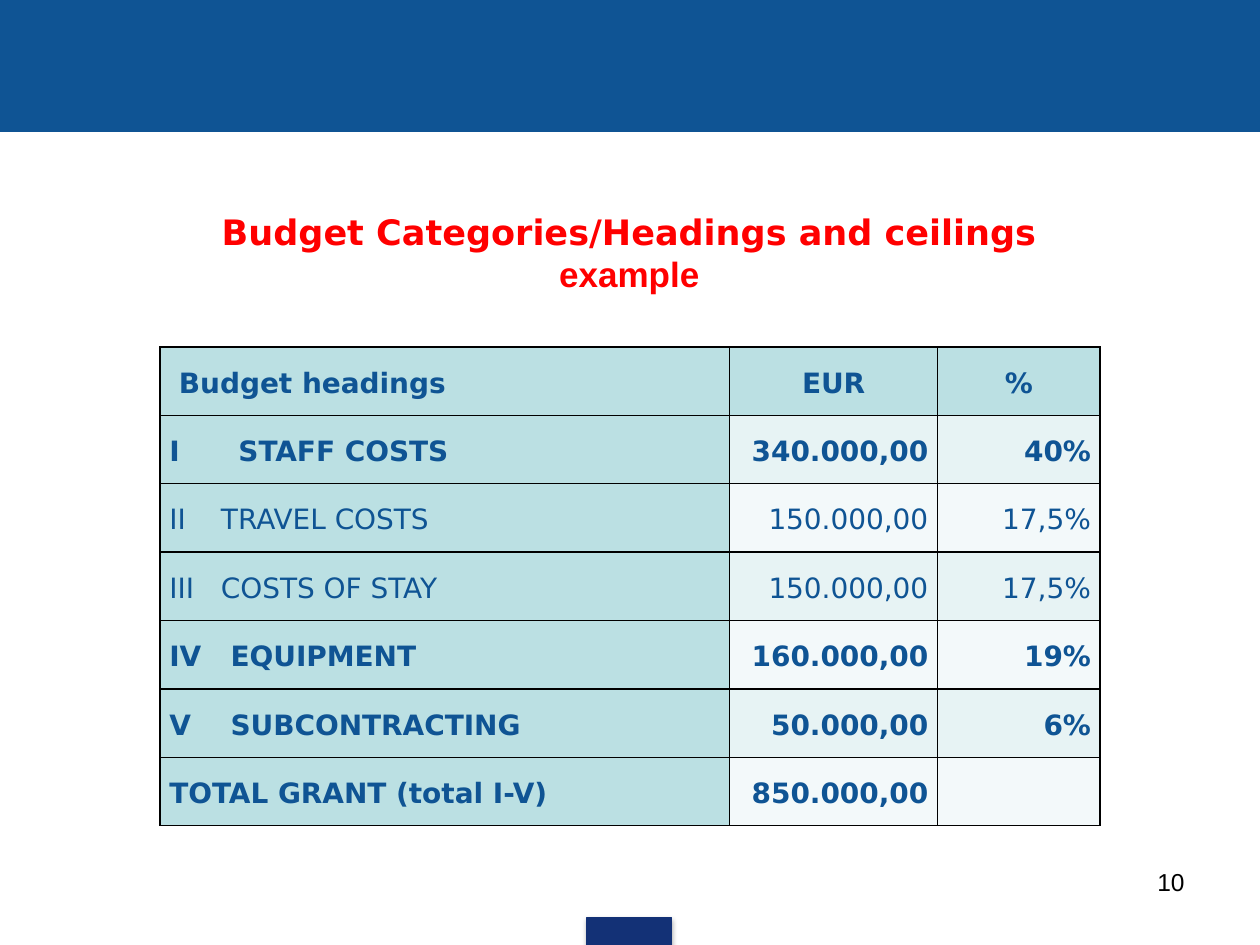
from dataclasses import dataclass

from lxml import etree
from pptx import Presentation
from pptx.dml.color import RGBColor
from pptx.enum.shapes import MSO_SHAPE
from pptx.enum.text import MSO_ANCHOR, MSO_AUTO_SIZE, PP_ALIGN
from pptx.oxml import parse_xml
from pptx.oxml.ns import qn
from pptx.util import Pt

RECT = MSO_SHAPE.RECTANGLE
MIDDLE = MSO_ANCHOR.MIDDLE
NO_FIT = MSO_AUTO_SIZE.NONE
LEFT, CENTER, RIGHT = PP_ALIGN.LEFT, PP_ALIGN.CENTER, PP_ALIGN.RIGHT
NS = "http://schemas.openxmlformats.org/drawingml/2006/main"


@dataclass(frozen=True)
class Theme:
    """Colours, fonts and type sizes of the slide."""
    blue: str = "0F5494"
    navy: str = "133176"
    red: str = "FF0000"
    black: str = "000000"
    heading_fill: str = "BBE0E3"
    bands: tuple = ("E7F3F4", "F3F9FA")
    sans: str = "DejaVu Sans"
    plain: str = "Arial"
    title_size: int = 20
    table_size: int = 16
    number_size: int = 14


THEME = Theme()
HEADER = ("Budget headings", "EUR", "%")
COLUMN_WIDTHS = (325.5, 118.8, 92.9)
ROW_HEIGHT = 39.1
HEADER_INDENT = 5.5
BUDGET = [
    ("I\tSTAFF COSTS", "340.000,00", "40%", True, 39.5),
    ("II\tTRAVEL COSTS", "150.000,00", "17,5%", False, 29.5),
    ("III\tCOSTS OF STAY", "150.000,00", "17,5%", False, 29.5),
    ("IV\tEQUIPMENT", "160.000,00", "19%", True, 35),
    ("V\tSUBCONTRACTING", "50.000,00", "6%", True, 35),
    ("TOTAL GRANT (total I-V)", "850.000,00", "", True, None),
]


def add_run(p, text, font, size, color, bold=False):
    """Add one formatted run to a paragraph."""
    r = p.add_run()
    r.text = text
    r.font.name, r.font.size, r.font.bold = font, Pt(size), bold
    r.font.color.rgb = RGBColor.from_string(color)


def add_bar(s, left, top, width, height, color):
    """Add a plain filled rectangle."""
    sp = s.shapes.add_shape(RECT, Pt(left), Pt(top), Pt(width), Pt(height))
    sp.shadow.inherit = False
    sp.fill.solid()
    sp.fill.fore_color.rgb = sp.line.color.rgb = RGBColor.from_string(color)
    sp.line.width = Pt(0.75)
    return sp


def add_shadow(sp):
    """Give a shape a soft shadow straight below it."""
    effects = sp._element.spPr.find(qn("a:effectLst"))
    effects.append(parse_xml(
        f'<a:outerShdw xmlns:a="{NS}" blurRad="{Pt(3.1)}" dist="{Pt(1.8)}" '
        f'dir="5400000" rotWithShape="0"><a:srgbClr val="{THEME.black}">'
        '<a:alpha val="35000"/></a:srgbClr></a:outerShdw>'))


def fill_title(s):
    """Place and write the two-line title."""
    sp = s.shapes.title
    sp.left, sp.top, sp.width, sp.height = Pt(76.3), Pt(116.6), Pt(566.6), Pt(55.4)
    tf = sp.text_frame
    tf.auto_size, tf.vertical_anchor = NO_FIT, MIDDLE
    lines = (("Budget Categories/Headings and ceilings", THEME.sans),
             ("example", THEME.plain))
    for i, (text, font) in enumerate(lines):
        p = tf.add_paragraph() if i else tf.paragraphs[0]
        p.alignment = CENTER
        add_run(p, text, font, THEME.title_size, THEME.red, True)


def set_borders(cell):
    """Draw a thin black line on all four sides of a cell."""
    tcPr = cell._tc.get_or_add_tcPr()
    for i, side in enumerate(("lnL", "lnR", "lnT", "lnB")):
        tcPr.insert(i, parse_xml(
            f'<a:{side} xmlns:a="{NS}" w="{Pt(1)}"><a:solidFill>'
            f'<a:srgbClr val="{THEME.black}"/></a:solidFill></a:{side}>'))


def fill_cell(cell, text, fill, align, bold, indent=0, tab=None):
    """Write and format one table cell."""
    cell.fill.solid()
    cell.fill.fore_color.rgb = RGBColor.from_string(fill)
    set_borders(cell)
    cell.vertical_anchor = MIDDLE
    cell.margin_left = cell.margin_right = Pt(5.3)
    cell.margin_top = cell.margin_bottom = 0
    p = cell.text_frame.paragraphs[0]
    p.alignment, p.line_spacing = align, 1.15
    pPr = p._p.get_or_add_pPr()
    if indent:
        pPr.set("marL", str(Pt(indent)))
    if tab:
        tabs = etree.SubElement(pPr, qn("a:tabLst"))
        etree.SubElement(tabs, qn("a:tab"), pos=str(Pt(tab)), algn="l")
    if text:
        add_run(p, text, THEME.sans, THEME.table_size, THEME.blue, bold)


def add_budget_table(s):
    """Add the table of budget headings with amounts and shares."""
    rows = len(BUDGET) + 1
    table = s.shapes.add_table(
        rows, len(HEADER), Pt(91.5), Pt(198.2),
        Pt(sum(COLUMN_WIDTHS)), Pt(ROW_HEIGHT * rows)).table
    for column, width in zip(table.columns, COLUMN_WIDTHS):
        column.width = Pt(width)
    for row in table.rows:
        row.height = Pt(ROW_HEIGHT)
    for j, text in enumerate(HEADER):
        fill_cell(table.cell(0, j), text, THEME.heading_fill,
                  CENTER if j else LEFT, True, 0 if j else HEADER_INDENT)
    for i, (heading, amount, share, bold, tab) in enumerate(BUDGET):
        fill_cell(table.cell(i + 1, 0), heading, THEME.heading_fill, LEFT, bold, tab=tab)
        for j, text in enumerate((amount, share), 1):
            fill_cell(table.cell(i + 1, j), text, THEME.bands[i % 2], RIGHT, bold)


def add_page_number(s, number):
    """Add the page number at the lower right."""
    tf = s.shapes.add_textbox(Pt(516.2), Pt(491.8), Pt(167.8), Pt(37.4)).text_frame
    tf.word_wrap = True
    p = tf.paragraphs[0]
    p.alignment = RIGHT
    add_run(p, number, THEME.plain, THEME.number_size, THEME.black)


def main():
    """Build the budget slide and save it."""
    prs = Presentation()
    prs.slide_width, prs.slide_height = Pt(720), Pt(540)
    s = prs.slides.add_slide(prs.slide_layouts[5])
    add_bar(s, 0, 0, 720, 75.4, THEME.blue)
    add_shadow(add_bar(s, 335.5, 524.2, 48.2, 15.8, THEME.navy))
    fill_title(s)
    add_budget_table(s)
    add_page_number(s, "10")
    prs.save("out.pptx")


if __name__ == "__main__":
    main()
